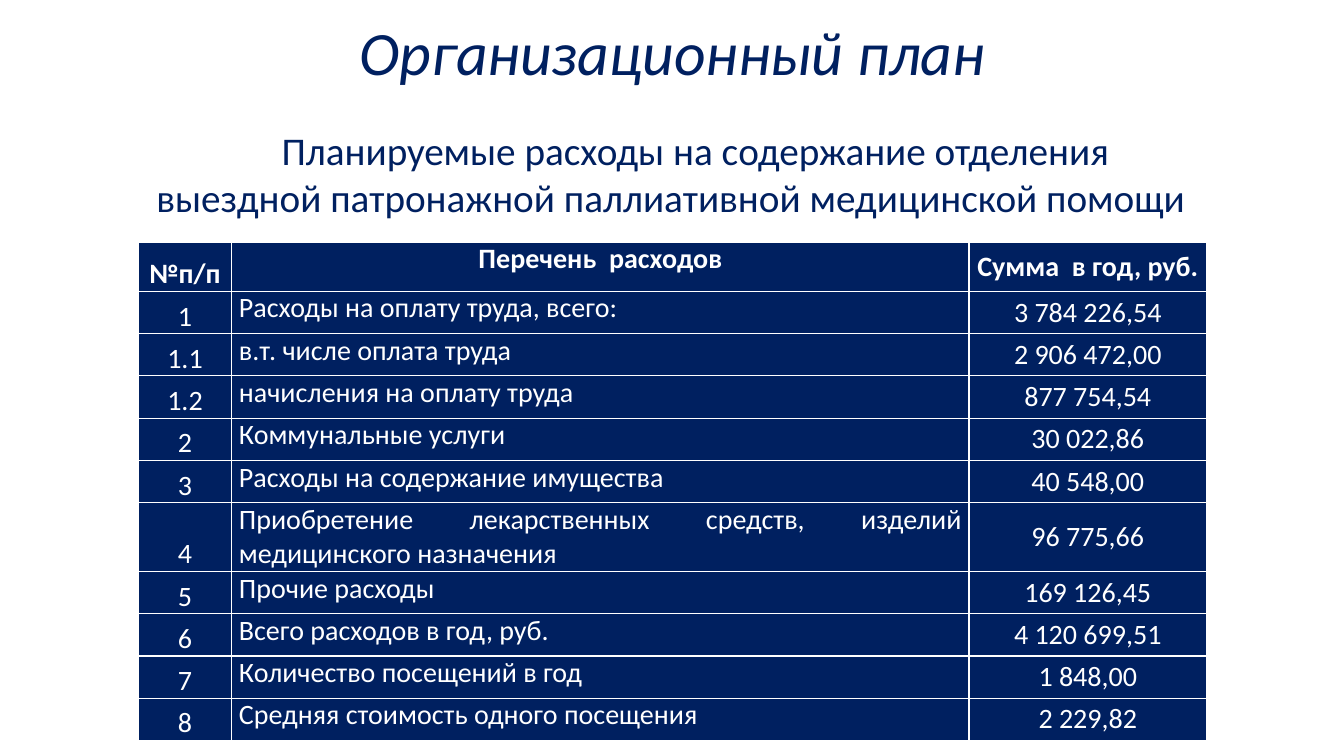
from pptx import Presentation
from pptx.dml.color import RGBColor
from pptx.enum.text import MSO_ANCHOR as Anchor, PP_ALIGN as Align
from pptx.util import Inches, Pt

NAVY = RGBColor(0x00, 0x20, 0x60)
WHITE = RGBColor(0xFF, 0xFF, 0xFF)
FONT = "Calibri"


def style(para, size, color, align):
    para.alignment = align
    para.font.name = FONT
    para.font.size = Pt(size)
    para.font.color.rgb = color


def add_heading(page, text, size, left, top, width, height):
    box = page.shapes.add_textbox(*map(Inches, (left, top, width, height)))
    box.text_frame.word_wrap = True
    box.text_frame.vertical_anchor = Anchor.MIDDLE
    para = box.text_frame.paragraphs[0]
    para.text = text
    style(para, size, NAVY, Align.CENTER)
    return para


deck = Presentation()
deck.slide_width, deck.slide_height = Inches(13.33), Inches(7.5)
page = deck.slides.add_slide(deck.slide_layouts[6])

title = add_heading(page, "Организационный план", 44, 0.62, 0.14, 12.1, 0.82)
title.line_spacing = 0.9
title.font.italic = True

# Expenses table
expenses = [
    ("№п/п", "Перечень  расходов", "Сумма  в год, руб."),
    ("1", "Расходы на оплату труда, всего:", "3 784 226,54"),
    ("1.1", "в.т. числе оплата труда", "2 906 472,00"),
    ("1.2", "начисления на оплату труда", "877 754,54"),
    ("2", "Коммунальные услуги", "30 022,86"),
    ("3", "Расходы на содержание имущества", "40 548,00"),
    ("4", "Приобретение лекарственных средств, изделий медицинского назначения",
     "96 775,66"),
    ("5", "Прочие расходы", "169 126,45"),
    ("6", "Всего расходов в год, руб.", "4 120 699,51"),
    ("7", "Количество посещений в год", "1 848,00"),
    ("8", "Средняя стоимость одного посещения", "2 229,82"),
]
column_widths = (0.93, 7.31, 2.36)
column_anchors = (Anchor.BOTTOM, Anchor.TOP, Anchor.MIDDLE)
column_aligns = (Align.CENTER, Align.JUSTIFY, Align.CENTER)
row_height = 0.42
tall_rows = {0: 0.49, 6: 0.68}

table = page.shapes.add_table(
    len(expenses), len(column_widths),
    Inches(1.37), Inches(2.4), Inches(10.59), Inches(4.95)).table
table.horz_banding = False
for column, width in zip(table.columns, column_widths):
    column.width = Inches(width)

for r, entries in enumerate(expenses):
    table.rows[r].height = Inches(tall_rows.get(r, row_height))
    for c, entry in enumerate(entries):
        cell = table.cell(r, c)
        cell.fill.solid()
        cell.fill.fore_color.rgb = NAVY
        cell.vertical_anchor = column_anchors[c]
        cell.margin_left = cell.margin_right = Inches(0.07)
        cell.margin_top = cell.margin_bottom = 0
        para = cell.text_frame.paragraphs[0]
        para.text = entry
        style(para, 20, WHITE, Align.CENTER if r == 0 else column_aligns[c])
        para.font.bold = r == 0

subtitle = add_heading(
    page,
    "Планируемые расходы на содержание отделения "
    "выездной патронажной паллиативной медицинской помощи",
    28, 1.37, 1.2, 10.56, 1.04)
subtitle._p.get_or_add_pPr().set("indent", str(Inches(0.49)))

deck.save("out.pptx")
